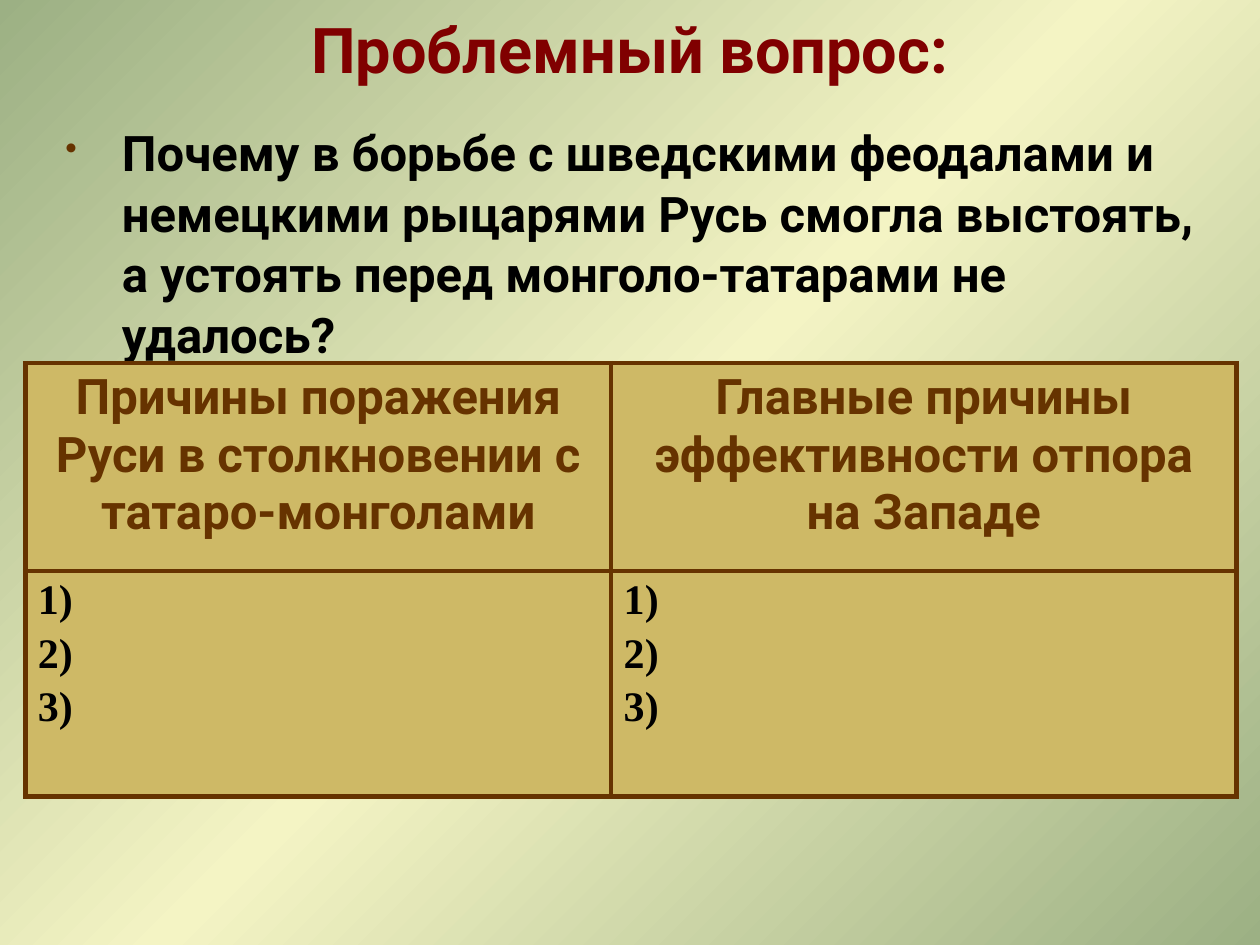
from copy import deepcopy

from lxml import etree
from pptx import Presentation, util as u
from pptx.dml import color
from pptx.enum import text
from pptx.oxml import ns

COLORS = {
    "edge": "9CB084",
    "glow": "F4F4C4",
    "title": "800000",
    "brown": "663300",
    "black": "000000",
    "cell": "CEB966",
}
HEADERS = [
    "Причины поражения Руси в столкновении с татаро-монголами",
    "Главные причины эффективности отпора на Западе",
]
REASONS = ["1)", "2)", "3)"]
QUESTION = (
    "Почему в борьбе с шведскими феодалами и немецкими рыцарями Русь смогла "
    "выстоять, а устоять перед монголо-татарами не удалось?"
)
TITLE = {"name": "Roboto", "size": u.Pt(36), "bold": True, "color": "title"}
BODY = {"name": "Roboto", "size": u.Pt(28), "bold": True, "color": "black"}
HEADER = {**BODY, "color": "brown"}
REASON = {**BODY, "name": "Times New Roman", "size": u.Pt(24)}


def rgb(name):
    return color.RGBColor.from_string(COLORS[name])


def add_xml(parent, tag, **attrs):
    return etree.SubElement(parent, ns.qn(tag), attrs)


def write(tf, lines, font, **paragraph):
    for i, line in enumerate(lines):
        p = tf.add_paragraph() if i else tf.paragraphs[0]
        for key, value in paragraph.items():
            setattr(p, key, value)
        r = p.add_run()
        r.text = line
        for key, value in font.items():
            if key == "color":
                r.font.color.rgb = rgb(value)
            else:
                setattr(r.font, key, value)


def paint_background(s):
    fill = s.background.fill
    fill.gradient()
    fill.gradient_angle = 315
    stops = s.element.find(".//" + ns.qn("a:gsLst"))
    stops.append(deepcopy(stops[0]))
    for stop, name, position in zip(fill.gradient_stops, ("edge", "glow", "edge"), (0, 0.5, 1)):
        stop.color.rgb = rgb(name)
        stop.position = position


def add_title(s):
    sp = s.shapes.title
    sp.left, sp.top, sp.width, sp.height = u.Cm(1.27), u.Cm(0), u.Cm(22.86), u.Cm(1.93)
    tf = sp.text_frame
    tf.auto_size = text.MSO_AUTO_SIZE.NONE
    tf.vertical_anchor = text.MSO_ANCHOR.MIDDLE
    write(tf, ["Проблемный вопрос:"], TITLE, alignment=text.PP_ALIGN.CENTER)


def add_bullet(p):
    pPr = p._p.get_or_add_pPr()
    pPr.set("marL", str(u.Cm(1.52)))
    pPr.set("indent", str(-u.Cm(1.14)))
    add_xml(add_xml(pPr, "a:buClr"), "a:srgbClr", val=COLORS["brown"])
    add_xml(pPr, "a:buSzPct", val="70000")
    add_xml(pPr, "a:buChar", char="•")


def add_question(s):
    sp = s.shapes.add_textbox(u.Cm(0.69), u.Cm(2.31), u.Cm(24.2), u.Cm(5.79))
    tf = sp.text_frame
    tf.word_wrap = True
    write(tf, [QUESTION], BODY, space_before=u.Pt(5.6), line_spacing=1.03)
    add_bullet(tf.paragraphs[0])


def add_borders(cell):
    tcPr = cell._tc.get_or_add_tcPr()
    for i, side in enumerate("LRTB"):
        ln = etree.Element(ns.qn(f"a:ln{side}"), w=str(u.Pt(3)))
        add_xml(add_xml(ln, "a:solidFill"), "a:srgbClr", val=COLORS["brown"])
        tcPr.insert(i, ln)


def add_reasons_table(s):
    widths, heights = (11.81, 12.6), (4.19, 4.55)
    table = s.shapes.add_table(
        2, 2, u.Cm(0.51), u.Cm(7.32), u.Cm(sum(widths)), u.Cm(sum(heights))
    ).table
    table.first_row = table.horz_banding = False
    for col, width in zip(table.columns, widths):
        col.width = u.Cm(width)
    for row, height in zip(table.rows, heights):
        row.height = u.Cm(height)
    for cell in table.iter_cells():
        cell.fill.solid()
        cell.fill.fore_color.rgb = rgb("cell")
        add_borders(cell)
    for i, header in enumerate(HEADERS):
        write(table.cell(0, i).text_frame, [header], HEADER,
              alignment=text.PP_ALIGN.CENTER, space_before=u.Pt(5.6))
        write(table.cell(1, i).text_frame, REASONS, REASON, space_before=u.Pt(4))


def main():
    prs = Presentation()
    prs.slide_width, prs.slide_height = u.Cm(25.4), u.Cm(19.05)
    s = prs.slides.add_slide(prs.slide_layouts[5])
    paint_background(s)
    add_title(s)
    add_question(s)
    add_reasons_table(s)
    prs.save("out.pptx")


if __name__ == "__main__":
    main()
